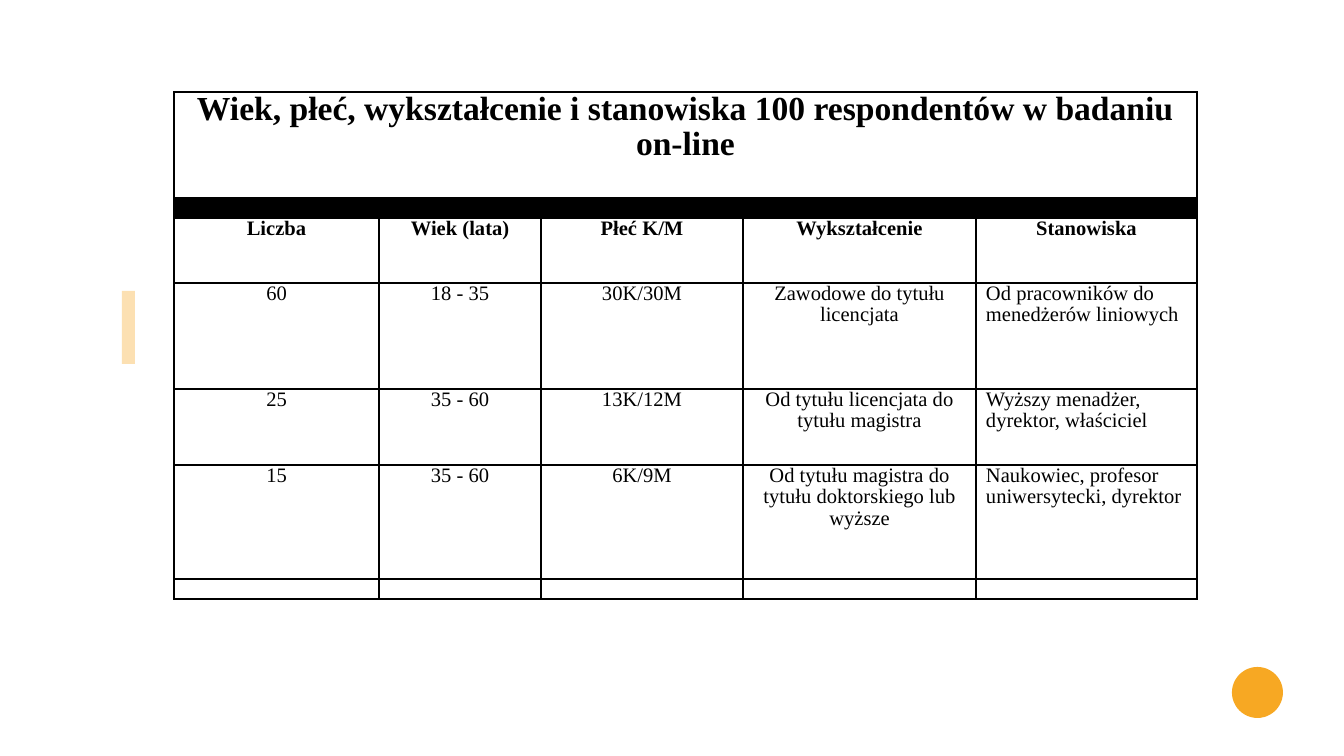
from dataclasses import dataclass

from lxml import etree
from pptx import Presentation
from pptx.dml.color import RGBColor
from pptx.enum.shapes import MSO_SHAPE
from pptx.enum.text import PP_ALIGN
from pptx.oxml.ns import qn
from pptx.util import Pt

RECTANGLE, OVAL = MSO_SHAPE.RECTANGLE, MSO_SHAPE.OVAL
LEFT, CENTER = PP_ALIGN.LEFT, PP_ALIGN.CENTER

TITLE = "Wiek, płeć, wykształcenie i stanowiska 100 respondentów w badaniu on-line"
HEADINGS = ["Liczba", "Wiek (lata)", "Płeć K/M", "Wykształcenie", "Stanowiska"]
RESPONDENTS = [
    ["60", "18 - 35", "30K/30M", "Zawodowe do tytułu licencjata",
     "Od pracowników do menedżerów liniowych"],
    ["25", "35 - 60", "13K/12M", "Od tytułu licencjata do tytułu magistra",
     "Wyższy menadżer, dyrektor, właściciel"],
    ["15", "35 - 60", "6K/9M", "Od tytułu magistra do tytułu doktorskiego lub wyższe",
     "Naukowiec, profesor uniwersytecki, dyrektor"],
]

# Number of grid columns that each cell of a row covers
TITLE_SPANS = [8]
BAND_SPANS = [1, 3, 1, 1, 2]
BODY_SPANS = [2, 1, 2, 2, 1]

# Lengths in px
SLIDE_SIZE = (1344, 756)
TABLE_POSITION = (174, 92)
COLUMN_WIDTHS = [180, 18, 162, 18, 184, 215, 18, 221]
ROW_HEIGHTS = [106, 20, 65, 106, 76, 114, 20]
CELL_MARGIN = 10
ACCENT_BAR = (122, 291, 13, 73)
PAGE_DOT = (1232, 667, 51, 51)


@dataclass(frozen=True)
class Theme:
    accent: str = "F7A823"
    ink: str = "000000"
    font: str = "Times New Roman"
    title_size: int = 18
    body_size: int = 11
    empty_size: int = 6
    border: int = 1
    line_spacing: float = 0.95
    bar_opacity: int = 35


THEME = Theme()


def px(length):
    return round(length * 914400 / 134.4)


def add_decoration(slide, kind, box, opacity=100):
    shape = slide.shapes.add_shape(kind, *map(px, box))
    shape.shadow.inherit = False
    shape.fill.solid()
    shape.fill.fore_color.rgb = RGBColor.from_string(THEME.accent)
    shape.line.fill.background()
    if opacity < 100:
        color = shape.fill._xPr.find(".//" + qn("a:srgbClr"))
        etree.SubElement(color, qn("a:alpha"), val=str(opacity * 1000))


def format_cell(cell, filled):
    """Set margins, borders and fill, and keep an empty cell low."""
    cell.margin_left = cell.margin_right = px(CELL_MARGIN)
    cell.margin_top = cell.margin_bottom = 0
    properties = cell._tc.get_or_add_tcPr()
    for side in ("a:lnL", "a:lnR", "a:lnT", "a:lnB"):
        line = etree.SubElement(properties, qn(side), w=str(Pt(THEME.border)))
        fill = etree.SubElement(line, qn("a:solidFill"))
        etree.SubElement(fill, qn("a:srgbClr"), val=THEME.ink)
    if filled:
        cell.fill.solid()
        cell.fill.fore_color.rgb = RGBColor.from_string(THEME.ink)
    else:
        cell.fill.background()
    paragraph = cell.text_frame.paragraphs[0]
    etree.SubElement(paragraph._p, qn("a:endParaRPr"), sz=str(THEME.empty_size * 100))


def write_cell(cell, text, size, bold, alignment):
    paragraph = cell.text_frame.paragraphs[0]
    paragraph.alignment = alignment
    paragraph.line_spacing = THEME.line_spacing
    run = paragraph.add_run()
    run.text = text
    run.font.name = THEME.font
    run.font.size = Pt(size)
    run.font.bold = bold
    run.font.color.rgb = RGBColor.from_string(THEME.ink)


def add_respondent_table(slide):
    rows = [
        (TITLE_SPANS, [TITLE]),
        (BAND_SPANS, []),
        (BODY_SPANS, HEADINGS),
        *((BODY_SPANS, respondents) for respondents in RESPONDENTS),
        (BODY_SPANS, []),
    ]
    size = (sum(COLUMN_WIDTHS), sum(ROW_HEIGHTS))
    table = slide.shapes.add_table(
        len(rows), len(COLUMN_WIDTHS), *map(px, TABLE_POSITION + size)).table
    table.first_row = table.horz_banding = False
    for column, width in zip(table.columns, COLUMN_WIDTHS):
        column.width = px(width)
    for row, height in zip(table.rows, ROW_HEIGHTS):
        row.height = px(height)

    for row_index, (spans, texts) in enumerate(rows):
        for cell in table.rows[row_index].cells:
            format_cell(cell, filled=spans is BAND_SPANS)
        starts = [sum(spans[:index]) for index in range(len(spans))]
        for start, span in zip(starts, spans):
            if span > 1:
                table.cell(row_index, start).merge(
                    table.cell(row_index, start + span - 1))
        is_title = spans is TITLE_SPANS
        is_heading = is_title or texts is HEADINGS
        text_size = THEME.title_size if is_title else THEME.body_size
        for index, (start, text) in enumerate(zip(starts, texts)):
            is_position = index == len(HEADINGS) - 1 and not is_heading
            write_cell(table.cell(row_index, start), text, text_size, is_heading,
                       LEFT if is_position else CENTER)


def main():
    presentation = Presentation()
    presentation.slide_width, presentation.slide_height = map(px, SLIDE_SIZE)
    slide = presentation.slides.add_slide(presentation.slide_layouts[6])
    add_decoration(slide, RECTANGLE, ACCENT_BAR, THEME.bar_opacity)
    add_decoration(slide, OVAL, PAGE_DOT)
    add_respondent_table(slide)
    presentation.save("out.pptx")


if __name__ == "__main__":
    main()
